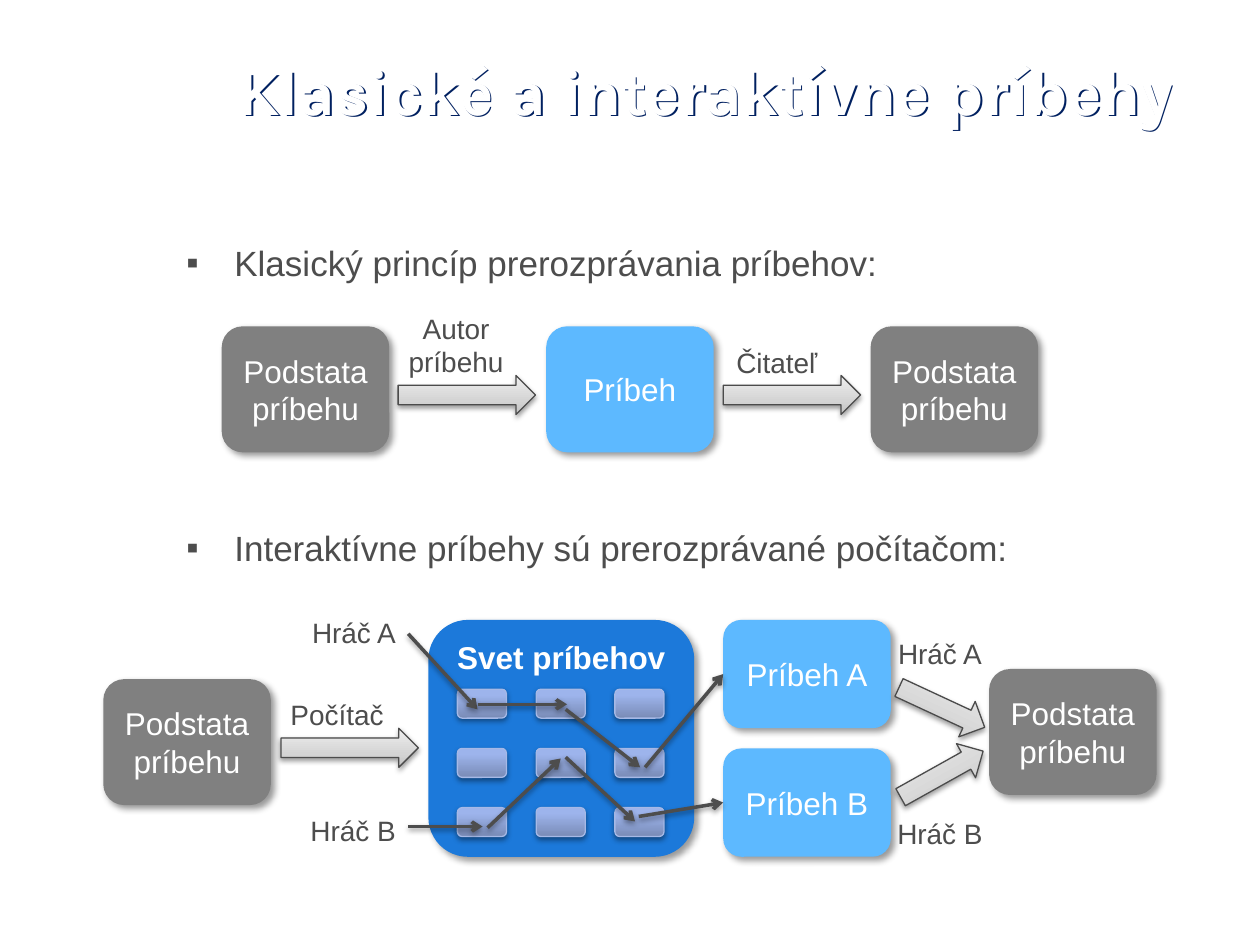
from lxml import etree
from pptx import Presentation
from pptx import util as u
from pptx.dml.color import RGBColor
from pptx.enum import shapes, text
from pptx.oxml.ns import qn

COLS, ROWS = 100, 75
INK = {"text": "4D4D4D", "white": "FFFFFF", "grey": "808080", "sky": "5DB9FF",
       "world": "1C79DA", "edge": "4B4B4B", "rim": "A6B9E6", "navy": "002060",
       "black": "000000"}
FADE = {"arrow": [(0, "C2C2C2"), (35, "D4D4D4"), (100, "EFEFEF")],
        "slot": [(0, "798BB6"), (80, "9DB4EC"), (100, "9CB5EF")]}
MID, LEFT, RIGHT = text.PP_ALIGN.CENTER, text.PP_ALIGN.LEFT, text.PP_ALIGN.RIGHT
KIND = shapes.MSO_SHAPE


def tint(name):
    return RGBColor.from_string(INK[name])


def add(node, tag, **attrs):
    return etree.SubElement(node, qn(tag), {k: str(v) for k, v in attrs.items()})


class Deck:
    def __init__(self):
        self.file = Presentation()
        self.file.slide_width, self.file.slide_height = u.Inches(10), u.Inches(7.5)
        self.slide = self.file.slides.add_slide(self.file.slide_layouts[1])
        self.shapes = self.slide.shapes
        self.font = "Arial"

    def place(self, *spots):
        units = (self.file.slide_width / COLS, self.file.slide_height / ROWS)
        return [round(spot * units[i % 2]) for i, spot in enumerate(spots)]

    def move(self, shape, *area):
        shape.left, shape.top, shape.width, shape.height = self.place(*area)

    def shade(self, shape, alpha, blur, dist, angle, ink="black"):
        props = shape._element.spPr
        effects = props.find(qn("a:effectLst"))
        if effects is None:
            effects = add(props, "a:effectLst")
        cast = add(effects, "a:outerShdw", blurRad=u.Pt(blur), dist=u.Pt(dist),
                   dir=angle * 60000, algn="ctr", rotWithShape=0)
        add(add(cast, "a:srgbClr", val=INK[ink]), "a:alpha", val=alpha * 1000)

    def style(self, frame, words, size, ink="white", side=MID, bold=False, font=None):
        frame.text = words
        for para in frame.paragraphs:
            para.alignment = side
            for run in para.runs:
                run.font.name = font or self.font
                run.font.size, run.font.bold = u.Pt(size), bold
                run.font.color.rgb = tint(ink)

    def title(self, words, *area):
        shape = self.shapes.title
        self.move(shape, *area)
        shape.fill.background()
        self.shade(shape, 100, 0, 1.41, 45, "navy")
        frame = shape.text_frame
        frame.auto_size = text.MSO_AUTO_SIZE.NONE
        frame.vertical_anchor = text.MSO_ANCHOR.MIDDLE
        self.style(frame, words, 36, side=RIGHT, bold=True, font="Karla")

    def list(self, items, gap, *area):
        shape = self.slide.placeholders[1]
        self.move(shape, *area)
        frame = shape.text_frame
        frame.auto_size = text.MSO_AUTO_SIZE.NONE
        self.style(frame, "\n".join(items), 20, "text", LEFT)
        for i, para in enumerate(frame.paragraphs):
            para.line_spacing = 0.8
            para.space_before = u.Pt(gap if i else 0)
            props = para._p.get_or_add_pPr()
            props.set("marL", str(u.Inches(0.38)))
            props.set("indent", str(-u.Inches(0.38)))
            add(props, "a:buFont", typeface="Arial")
            add(props, "a:buChar", char="▪")

    def box(self, words, ink, *area, bold=False, anchor=text.MSO_ANCHOR.MIDDLE):
        shape = self.shapes.add_shape(KIND.ROUNDED_RECTANGLE, *self.place(*area))
        shape.shadow.inherit = False
        shape.fill.solid()
        shape.fill.fore_color.rgb = tint(ink)
        shape.line.fill.background()
        self.shade(shape, 40, 4, 3, 45)
        shape.text_frame.word_wrap = True
        shape.text_frame.vertical_anchor = anchor
        self.style(shape.text_frame, words, 18, bold=bold)
        return shape

    def glossy(self, kind, fade, edge, *area, turn=0):
        shape = self.shapes.add_shape(kind, *self.place(*area))
        shape.rotation = turn
        shape.shadow.inherit = False
        shape.fill.gradient()
        shape.fill.gradient_angle = 90
        stops = shape._element.spPr.find(qn("a:gradFill")).find(qn("a:gsLst"))
        for stop in list(stops):
            stops.remove(stop)
        for pos, ink in FADE[fade]:
            add(add(stops, "a:gs", pos=pos * 1000), "a:srgbClr", val=ink)
        shape.line.color.rgb = tint(edge)
        shape.line.width = u.Pt(0.75)
        self.shade(shape, 38, 3.1, 1.6, 90)

    def arrow(self, *area, turn=0):
        self.glossy(KIND.RIGHT_ARROW, "arrow", "edge", *area, turn=turn)

    def slot(self, *area):
        self.glossy(KIND.ROUNDED_RECTANGLE, "slot", "rim", *area)

    def label(self, words, *area, side=MID):
        frame = self.shapes.add_textbox(*self.place(*area)).text_frame
        frame.word_wrap = side == RIGHT
        self.style(frame, words, 16, "text", side)

    def step(self, start, end, goal=None):
        line = self.shapes.add_connector(shapes.MSO_CONNECTOR.STRAIGHT,
                                         *self.place(*start, *end))
        if goal is not None:
            line.end_connect(goal, 1)
        line.line.color.rgb = tint("text")
        line.line.width = u.Pt(2)
        add(line._element.spPr.find(qn("a:ln")), "a:tailEnd", type="arrow")
        self.shade(line, 38, 3.1, 1.6, 90)


def main():
    deck = Deck()
    deck.title("Klasické a interaktívne príbehy", 13, 3.6, 81.1, 7.1)
    deck.list(["Klasický princíp prerozprávania príbehov:",
               "Interaktívne príbehy sú prerozprávané počítačom:"],
              144, 13.8, 19.3, 74, 48.9)

    core = "Podstata príbehu"
    chain = [(core, "grey"), ("Príbeh", "sky"), (core, "grey")]
    for i, (words, ink) in enumerate(chain):
        deck.box(words, ink, 17.6 + 25.75 * i, 25.9, 13.3, 10)
    for left in (31.6, 57.4):
        deck.arrow(left, 29.8, 10.9, 3.1)
    deck.label("Autor\npríbehu", 31.4, 24.2, 9.6, 6.4)
    deck.label("Čitateľ", 57.4, 26.9, 8.5, 3.7)

    deck.box("Svet príbehov", "world", 34, 49.2, 21.1, 18.8,
             bold=True, anchor=text.MSO_ANCHOR.TOP)
    for row in range(3):
        for col in range(3):
            deck.slot(36.3 + 6.25 * col, 54.7 + 4.7 * row, 3.9, 2.3)

    deck.box(core, "grey", 8.2, 53.9, 13.3, 10)
    deck.box(core, "grey", 78.5, 53.1, 13.3, 10)
    deck.label("Počítač", 22, 54.9, 9.5, 3.7)
    deck.arrow(22.3, 57.8, 10.9, 3.1)

    routes = {
        "A": [((32.4, 50.3), (37.9, 56.3)), ((37.9, 55.9), (45, 55.9)),
              ((44.9, 56.3), (50.8, 60.9)), ((51.2, 60.9), (57.4, 53.5))],
        "B": [((32.4, 65.6), (38.3, 65.6)), ((38.7, 65.7), (44.5, 60.2)),
              ((44.9, 60.1), (50.4, 65.2)), ((50.7, 64.8), (57.4, 63.7))],
    }
    tops = {"A": (49.2, 48.4, 50, 54.6, 24.9), "B": (59.4, 64.1, 64.3, 59.9, 330.8)}
    for name, steps in routes.items():
        top, start, end, way, turn = tops[name]
        tale = deck.box(f"Príbeh {name}", "sky", 57.4, top, 13.3, 8.6)
        for pair in steps[:-1]:
            deck.step(*pair)
        deck.step(*steps[-1], goal=tale)
        deck.label(f"Hráč {name}", 23, start, 9.4, 3.7, side=RIGHT)
        deck.arrow(71, way, 7.5, 3.1, turn=turn)
        deck.label(f"Hráč {name}", 69.9, end, 9.4, 3.7)

    deck.file.save("out.pptx")


if __name__ == "__main__":
    main()
